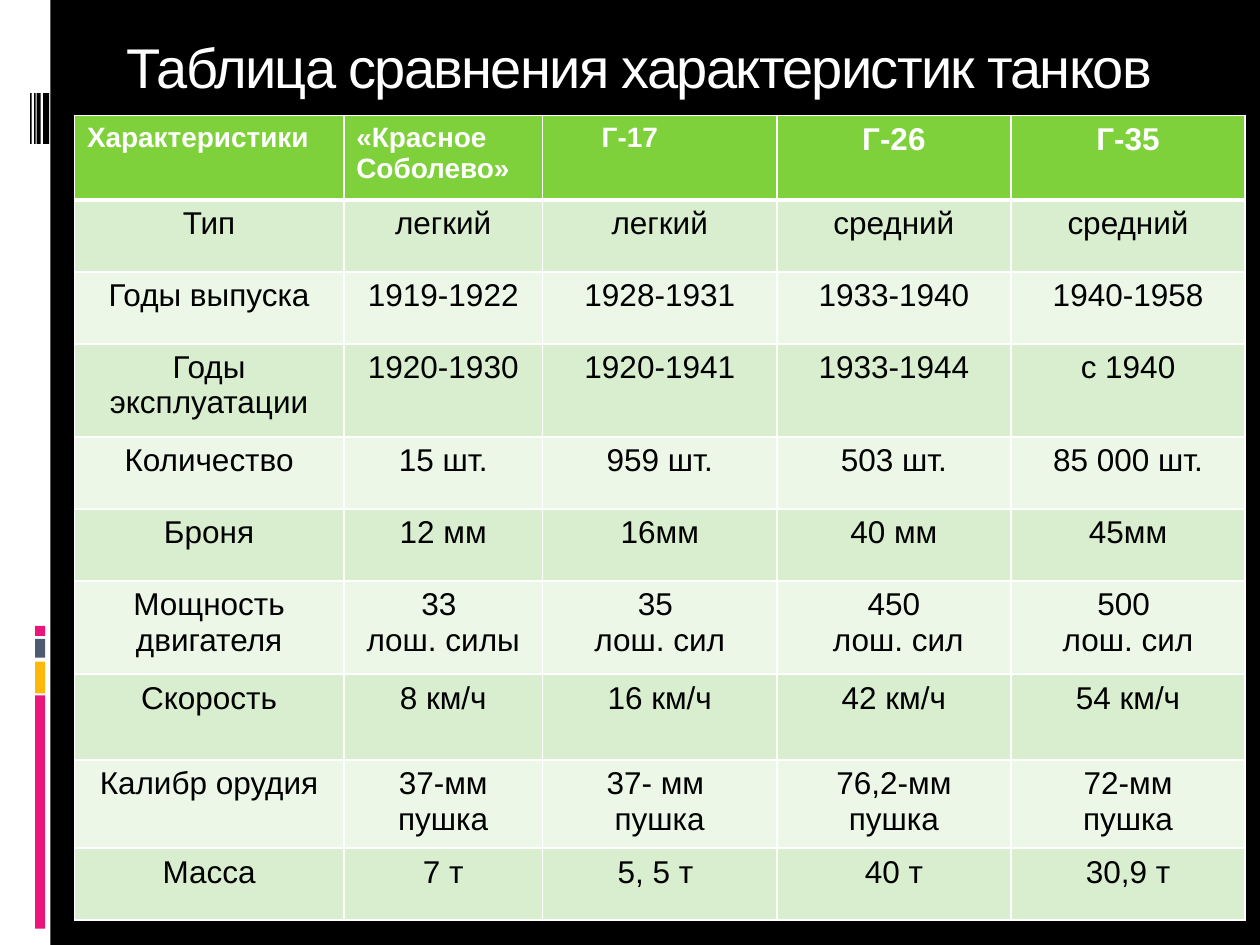
from dataclasses import dataclass

from lxml.etree import SubElement
from pptx import Presentation
from pptx.dml.color import RGBColor
from pptx.enum.shapes import MSO_SHAPE
from pptx.enum.text import MSO_ANCHOR, PP_ALIGN
from pptx.oxml.ns import qn
from pptx.util import Cm, Pt


@dataclass(frozen=True)
class Theme:
    font: str = "Arial"
    black: str = "000000"
    white: str = "FFFFFF"
    pink: str = "EA157A"
    gold: str = "FEB80A"
    slate: str = "4E5B6F"
    green: str = "7FD13B"
    bands: tuple = ("D8EECE", "ECF7E8")
    title: int = 32
    body: int = 18
    small: int = 16
    thin: int = 1
    thick: int = 3


THEME = Theme()

TITLE = "Таблица сравнения характеристик танков"
HEAD = ["Характеристики", "«Красное Соболево»", "Г-17", "Г-26", "Г-35"]
ROWS = [
    ["Тип", "легкий", "легкий", "средний", "средний"],
    ["Годы выпуска", "1919-1922", "1928-1931", "1933-1940", "1940-1958"],
    ["Годы эксплуатации", "1920-1930", "1920-1941", "1933-1944", "с 1940"],
    ["Количество", "15 шт.", "959 шт.", "503 шт.", "85 000 шт."],
    ["Броня", "12 мм", "16мм", "40 мм", "45мм"],
    ["Мощность двигателя", "33 \nлош. силы", "35 \nлош. сил",
     "450\n лош. сил", "500 \nлош. сил"],
    ["Скорость", "8 км/ч", "16 км/ч", "42 км/ч", "54 км/ч"],
    ["Калибр орудия", "37-мм пушка", "37- мм \nпушка",
     "76,2-мм\nпушка", "72-мм\nпушка"],
    ["Масса", "7 т", "5, 5 т ", "40 т", "30,9 т"],
]
WIDTHS = [5.43, 4.01, 4.72, 4.72, 4.72]
SHORT, MID, TALL = 1.45, 1.73, 1.88
HEIGHTS = [1.7, SHORT, SHORT, TALL, SHORT, SHORT, TALL, MID, MID, SHORT]


def rgb(code):
    return RGBColor.from_string(code)


def style(frame, size, color, bold=False, align=PP_ALIGN.LEFT):
    for para in frame.paragraphs:
        para.alignment = align
        for run in para.runs:
            run.font.name = THEME.font
            run.font.size = Pt(size)
            run.font.bold = bold
            run.font.color.rgb = rgb(color)


def block(slide, left, top, width, height, color):
    shape = slide.shapes.add_shape(
        MSO_SHAPE.RECTANGLE, Cm(left), Cm(top), Cm(width), Cm(height))
    shape.shadow.inherit = False
    shape.fill.solid()
    shape.fill.fore_color.rgb = rgb(color)
    shape.line.fill.background()


def edge(cell, side, width):
    line = SubElement(cell._tc.get_or_add_tcPr(), qn("a:ln" + side),
                      w=str(Pt(width)))
    fill = SubElement(line, qn("a:solidFill"))
    SubElement(fill, qn("a:srgbClr"), val=THEME.white)


def draw_side(slide, left, top, width, height):
    block(slide, left, top, width, height, THEME.white)
    # Coloured bars
    for drop, tall, color in [(14.02, 4.7, THEME.pink),
                              (13.34, 0.64, THEME.gold),
                              (12.88, 0.38, THEME.slate),
                              (12.62, 0.2, THEME.pink)]:
        block(slide, left + 0.71, top + drop, 0.2, tall, color)
    # Barcode stripes
    for shift, wide in [(0.87, 0.12), (0.74, 0.08), (0.69, 0.03), (0.61, 0.03)]:
        block(slide, left + shift, top + 1.88, wide, 1.02, THEME.black)


def draw_title(slide, left, top, width, height):
    box = slide.shapes.add_textbox(Cm(left), Cm(top), Cm(width), Cm(height))
    frame = box.text_frame
    frame.word_wrap = True
    frame.vertical_anchor = MSO_ANCHOR.MIDDLE
    frame.margin_bottom = Cm(0.44)
    frame.text = TITLE
    style(frame, THEME.title, THEME.white)
    frame.paragraphs[0].runs[0].font._element.set("spc", "-100")


def draw_cell(cell, row, col, text):
    frame = cell.text_frame
    frame.text = text
    top = row == 0
    if top:
        left = col < 3
        style(frame, THEME.small if left else THEME.body, THEME.white, True,
              PP_ALIGN.LEFT if left else PP_ALIGN.CENTER)
    else:
        style(frame, THEME.body, THEME.black, align=PP_ALIGN.CENTER)
    # Heavy rule under the header
    edge(cell, "L", THEME.thin)
    edge(cell, "R", THEME.thin)
    edge(cell, "T", THEME.thick if row == 1 else THEME.thin)
    edge(cell, "B", THEME.thick if top else THEME.thin)
    cell.fill.solid()
    cell.fill.fore_color.rgb = rgb(
        THEME.green if top else THEME.bands[(row - 1) % 2])


def draw_table(slide, left, top, width, height):
    data = [HEAD] + ROWS
    table = slide.shapes.add_table(
        len(data), len(HEAD), Cm(left), Cm(top), Cm(width), Cm(height)).table
    table.first_row = table.horz_banding = False
    for col, wide in zip(table.columns, WIDTHS):
        col.width = Cm(wide)
    for row, tall in zip(table.rows, HEIGHTS):
        row.height = Cm(tall)
    for i, texts in enumerate(data):
        for j, text in enumerate(texts):
            draw_cell(table.cell(i, j), i, j, text)
    # The third heading is indented
    table.cell(0, 2).margin_left = Cm(1.19)


def main():
    deck = Presentation()
    deck.slide_width, deck.slide_height = Cm(25.4), Cm(19.05)
    slide = deck.slides.add_slide(deck.slide_layouts[6])
    slide.background.fill.solid()
    slide.background.fill.fore_color.rgb = rgb(THEME.black)
    draw_side(slide, 0, 0, 1.02, 19.05)
    draw_title(slide, 2.31, 0.53, 21.59, 1.91)
    draw_table(slide, 1.5, 2.33, sum(WIDTHS), sum(HEIGHTS))
    deck.save("out.pptx")


if __name__ == "__main__":
    main()
